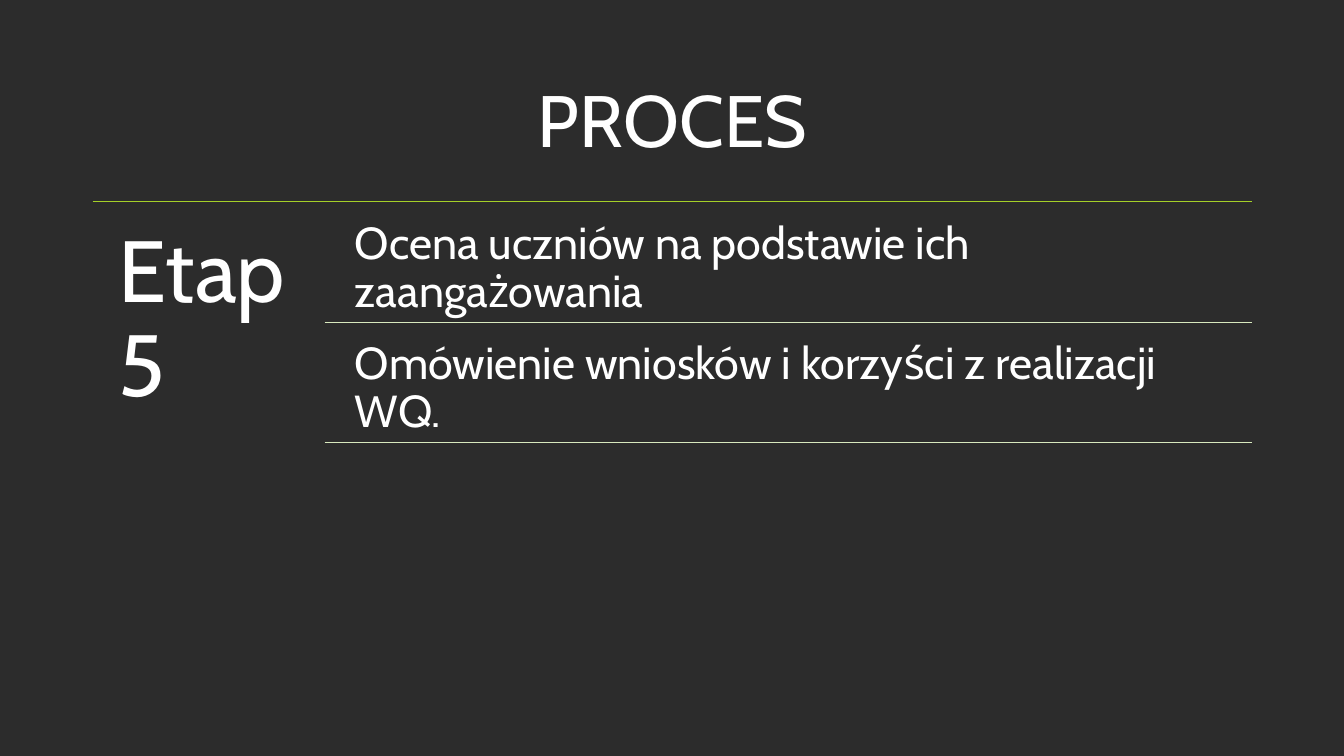
from dataclasses import dataclass

from lxml.etree import SubElement
from pptx import Presentation
from pptx.dml.color import RGBColor
from pptx.enum.shapes import MSO_CONNECTOR
from pptx.enum.text import MSO_ANCHOR, MSO_AUTO_SIZE, PP_ALIGN
from pptx.oxml.ns import qn
from pptx.util import Inches, Pt

TITLE = "PROCES"
STAGE = "Etap 5"
ACTIVITIES = [
    "Ocena uczniów na podstawie ich zaangażowania",
    "Omówienie wniosków i korzyści z realizacji WQ.",
]


@dataclass(frozen=True)
class Theme:
    font: str = "Cabin"
    background: RGBColor = RGBColor(0x2C, 0x2C, 0x2C)
    text: RGBColor = RGBColor(0xFF, 0xFF, 0xFF)
    main_rule: RGBColor = RGBColor(0xA5, 0xD0, 0x28)
    row_rule: RGBColor = RGBColor(0xD8, 0xE9, 0xBE)
    title_size: int = 52
    stage_size: int = 62
    activity_size: int = 32
    rule_width: int = 1


THEME = Theme()
LEFT, RIGHT = 0.92, 12.42
MAIN_RULE_TOP = 2
STAGE_WIDTH, STAGE_HEIGHT = 2.3, 2.45
ACTIVITY_LEFT, FIRST_ACTIVITY_TOP = 3.39, 2.06
ACTIVITY_HEIGHT, ACTIVITY_PITCH = 1.14, 1.19


def write(frame, wording, size, align=PP_ALIGN.LEFT, anchor=MSO_ANCHOR.TOP, inset=None):
    """Fill a text frame with one paragraph; inset in inches applies to all sides."""
    settings = {"word_wrap": True, "auto_size": MSO_AUTO_SIZE.NONE,
                "vertical_anchor": anchor}
    if inset is not None:
        for side in ("left", "top", "right", "bottom"):
            settings[f"margin_{side}"] = Inches(inset)
    for name, value in settings.items():
        setattr(frame, name, value)
    paragraph = frame.paragraphs[0]
    paragraph.alignment = align
    paragraph.line_spacing = 0.9
    run = paragraph.add_run()
    run.text = wording
    run.font.name = THEME.font
    run.font.size = Pt(size)
    run.font.color.rgb = THEME.text


def add_text(slide, wording, box, size, inset):
    frame = slide.shapes.add_textbox(*map(Inches, box)).text_frame
    write(frame, wording, size, inset=inset)


def add_rule(slide, left, top, color):
    rule = slide.shapes.add_connector(
        MSO_CONNECTOR.STRAIGHT, Inches(left), Inches(top), Inches(RIGHT), Inches(top))
    rule.line.color.rgb = color
    rule.line.width = Pt(THEME.rule_width)
    SubElement(rule._element.spPr, qn("a:effectLst"))


def main():
    deck = Presentation()
    deck.slide_width, deck.slide_height = Inches(13.33), Inches(7.5)
    slide = deck.slides.add_slide(deck.slide_layouts[5])
    slide.background.fill.solid()
    slide.background.fill.fore_color.rgb = THEME.background

    title = slide.shapes.title
    title.left, title.top = Inches(LEFT), Inches(0.61)
    title.width, title.height = Inches(RIGHT - LEFT), Inches(1.24)
    write(title.text_frame, TITLE, THEME.title_size, PP_ALIGN.CENTER, MSO_ANCHOR.MIDDLE)

    add_rule(slide, LEFT, MAIN_RULE_TOP, THEME.main_rule)
    add_text(slide, STAGE, (LEFT, MAIN_RULE_TOP, STAGE_WIDTH, STAGE_HEIGHT),
             THEME.stage_size, 0.26)

    for row, activity in enumerate(ACTIVITIES):
        top = FIRST_ACTIVITY_TOP + row * ACTIVITY_PITCH
        box = (ACTIVITY_LEFT, top, RIGHT - ACTIVITY_LEFT, ACTIVITY_HEIGHT)
        add_text(slide, activity, box, THEME.activity_size, 0.13)
        add_rule(slide, LEFT + STAGE_WIDTH, top + ACTIVITY_HEIGHT, THEME.row_rule)

    deck.save("out.pptx")


if __name__ == "__main__":
    main()
